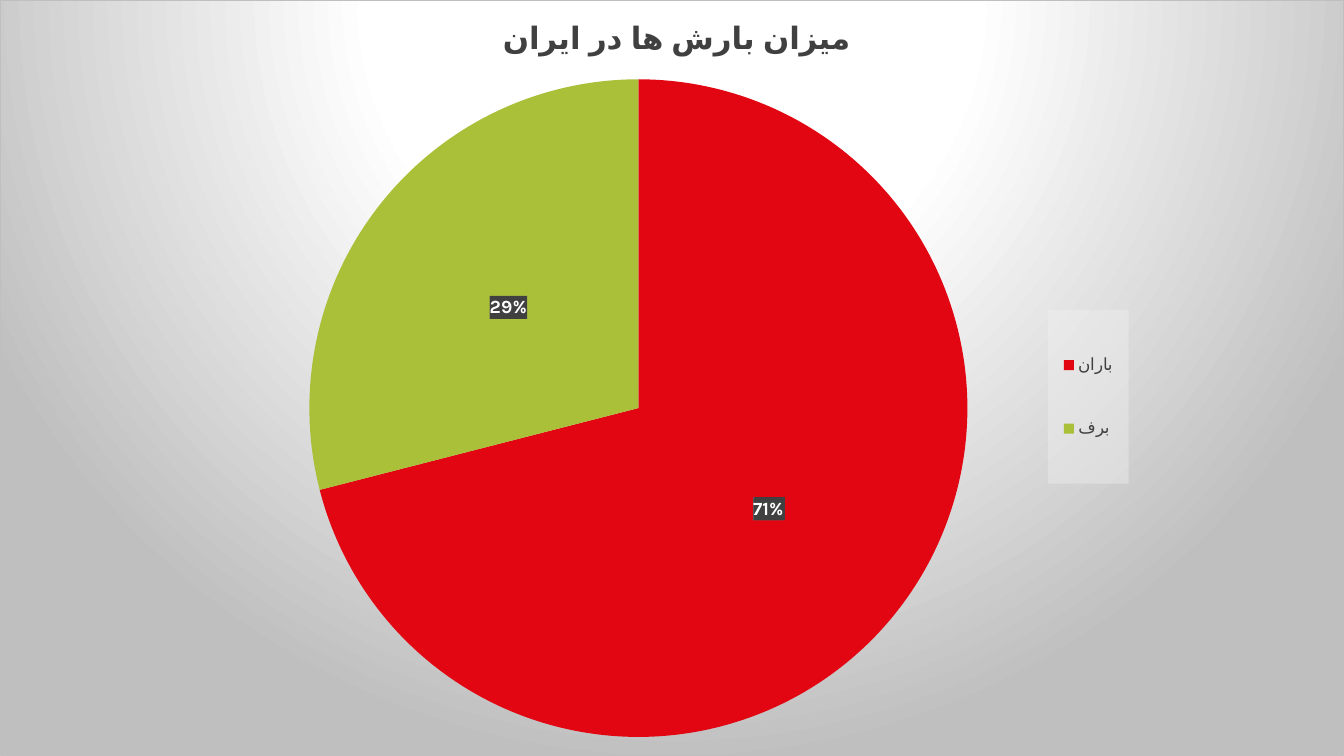
from dataclasses import dataclass

from lxml import etree
from pptx import Presentation
from pptx import util as u
from pptx.chart import data as chart_data
from pptx.dml import color
from pptx.enum import chart as ch
from pptx.oxml import ns

COLORS = {
    "rain": "E20613",
    "snow": "A9C038",
    "text": "404040",
    "label": "FFFFFF",
    "center": "FFFFFF",
    "edge": "BFBFBF",
    "legend": "F2F2F2",
    "stripe_dark": "404040",
    "stripe_light": "595959",
}
FONT = "Karla"
SLIDE_WIDTH, SLIDE_HEIGHT = u.Pt(960), u.Pt(540)
NAMESPACES = ns.nsdecls("c", "a")


@dataclass
class Precipitation:
    name: str
    share: int
    color: str


@dataclass
class Placement:
    x: float
    y: float
    w: float = 0
    h: float = 0


PRECIPITATION = [
    Precipitation("باران", 71, "rain"),
    Precipitation("برف", 29, "snow"),
]


def rgb(name: str) -> color.RGBColor:
    return color.RGBColor.from_string(COLORS[name])


def srgb(name: str, inner: str = "") -> str:
    return f'<a:srgbClr val="{COLORS[name]}">{inner}</a:srgbClr>'


def style_font(font, size: float, name: str, bold: bool = False) -> None:
    font.name = FONT
    font.size = u.Pt(size)
    font.bold = bold
    font.color.rgb = rgb(name)


def shape_properties(content: str):
    return etree.fromstring(f"<c:spPr {NAMESPACES}>{content}</c:spPr>")


def place(element, index: int, spot: Placement, target: str = "") -> None:
    for old in element.findall(ns.qn("c:layout")):
        element.remove(old)
    modes = '<c:xMode val="edge"/><c:yMode val="edge"/>'
    sizes = f'<c:w val="{spot.w}"/><c:h val="{spot.h}"/>' if spot.w else ""
    element.insert(index, etree.fromstring(
        f"<c:layout {NAMESPACES}><c:manualLayout>{target}{modes}"
        f'<c:x val="{spot.x}"/><c:y val="{spot.y}"/>{sizes}'
        "</c:manualLayout></c:layout>"))


def paint_background(chart) -> None:
    stops = "".join(
        f'<a:gs pos="{position * 1000}">{srgb(name)}</a:gs>'
        for position, name in ((0, "center"), (39, "center"), (100, "edge")))
    chart.element.find(ns.qn("c:chart")).addnext(shape_properties(
        f'<a:gradFill flip="none" rotWithShape="1"><a:gsLst>{stops}</a:gsLst>'
        '<a:path path="circle"><a:fillToRect l="50000" t="-80000" '
        'r="50000" b="180000"/></a:path></a:gradFill>'
        f'<a:ln w="{u.Pt(0.75)}"><a:solidFill>{srgb("edge")}</a:solidFill></a:ln>'))


def add_title(chart) -> None:
    title = chart.chart_title
    title.include_in_layout = False
    title.text_frame.text = "میزان بارش ها در ایران"
    style_font(title.text_frame.paragraphs[0].runs[0].font, 22, "text", True)
    place(title.element, 1, Placement(0.37, 0.02))


def add_legend(chart) -> None:
    chart.has_legend = True
    legend = chart.legend
    legend.position = ch.XL_LEGEND_POSITION.RIGHT
    legend.include_in_layout = False
    style_font(legend.font, 12, "text")
    element = legend._element
    place(element, 1, Placement(0.78, 0.41, 0.06, 0.23))
    tint = srgb("legend", '<a:alpha val="39000"/>')
    element.find(ns.qn("c:txPr")).addprevious(
        shape_properties(f"<a:solidFill>{tint}</a:solidFill>"))


def style_slices(plot) -> None:
    plot.vary_by_categories = True
    slices = plot.series[0]
    for index, kind in enumerate(PRECIPITATION):
        fill = slices.points[index].format.fill
        fill.solid()
        fill.fore_color.rgb = rgb(kind.color)

    labels = slices.data_labels
    labels.show_value = False
    labels.show_percentage = True
    labels.number_format = "0%"
    labels.number_format_is_linked = False
    labels.position = ch.XL_LABEL_POSITION.CENTER
    style_font(labels.font, 13.3, "label", True)
    labels._element.find(ns.qn("c:txPr")).addprevious(shape_properties(
        f'<a:pattFill prst="dkVert"><a:fgClr>{srgb("stripe_dark")}</a:fgClr>'
        f'<a:bgClr>{srgb("stripe_light")}</a:bgClr></a:pattFill>'))


def main() -> None:
    deck = Presentation()
    deck.slide_width, deck.slide_height = SLIDE_WIDTH, SLIDE_HEIGHT
    slide = deck.slides.add_slide(deck.slide_layouts[6])

    rainfall = chart_data.CategoryChartData()
    rainfall.categories = [kind.name for kind in PRECIPITATION]
    rainfall.add_series("Series 1", [kind.share for kind in PRECIPITATION])
    chart = slide.shapes.add_chart(
        ch.XL_CHART_TYPE.PIE, u.Pt(0), u.Pt(0),
        SLIDE_WIDTH, SLIDE_HEIGHT, rainfall).chart

    chart.font.name = FONT
    chart.font.size = u.Pt(10)
    paint_background(chart)
    add_title(chart)
    add_legend(chart)
    style_slices(chart.plots[0])
    plot_area = chart.element.find(ns.qn("c:chart")).find(ns.qn("c:plotArea"))
    place(plot_area, 0, Placement(0.23, 0.1, 0.49, 0.88),
          '<c:layoutTarget val="inner"/>')

    deck.save("out.pptx")


if __name__ == "__main__":
    main()
